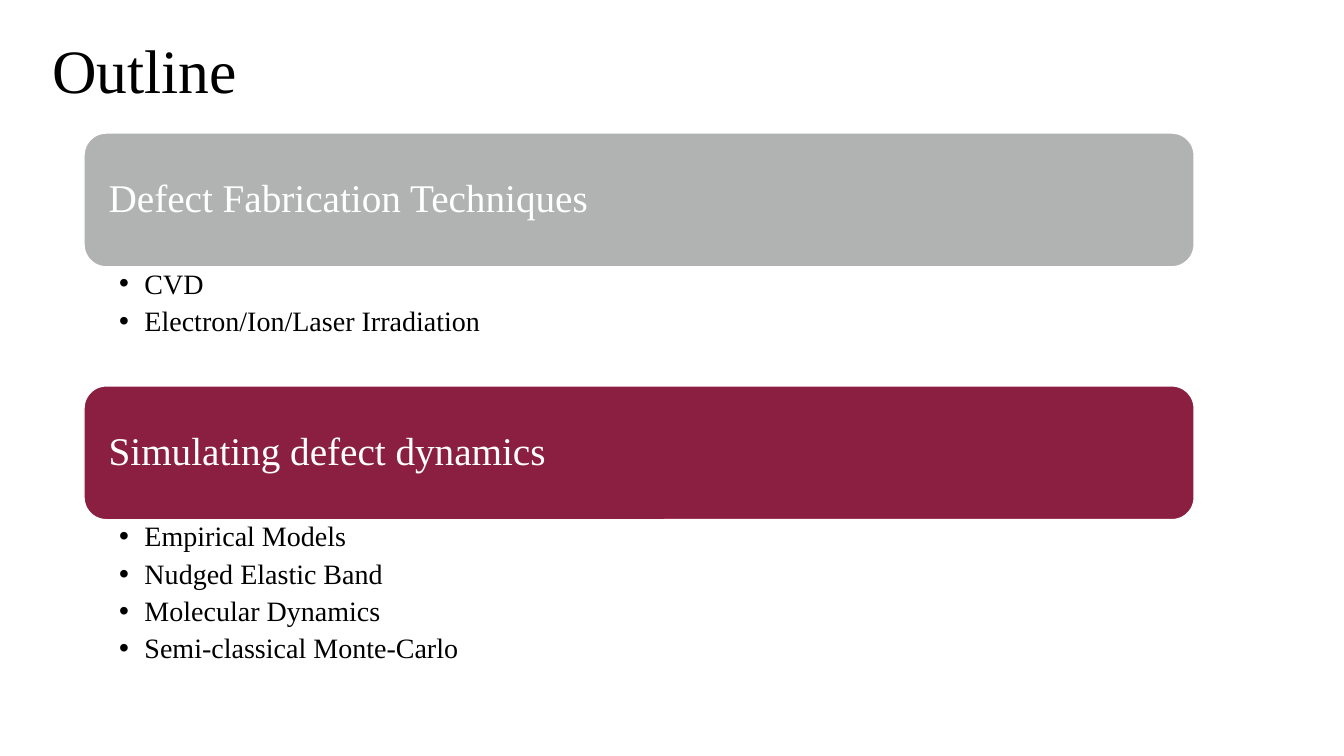
from pptx import Presentation
from pptx.dml.color import RGBColor
from pptx.enum.shapes import MSO_SHAPE
from pptx.enum.text import MSO_ANCHOR, MSO_AUTO_SIZE, PP_ALIGN
from pptx.util import Inches, Pt

theme = {
    "font": "Times New Roman",
    "ink": RGBColor.from_string("000000"),
    "paper": RGBColor.from_string("FFFFFF"),
    "gray": RGBColor.from_string("B1B3B3"),
    "maroon": RGBColor.from_string("8B1F41"),
    "title": Pt(44),
    "head": Pt(28),
    "item": Pt(20),
}

deck = Presentation()
deck.slide_width, deck.slide_height = Inches(13.33), Inches(7.5)
col, row = deck.slide_width / 100, deck.slide_height / 100


def place(shape, left, top, width, height):
    box = {"left": left * col, "top": top * row,
           "width": width * col, "height": height * row}
    for name, value in box.items():
        setattr(shape, name, int(value))


def write(shape, lines, size, color, frame, para):
    text = shape.text_frame
    text.text = "\n".join(lines)
    frame = {"word_wrap": True, "auto_size": MSO_AUTO_SIZE.NONE, **frame}
    para = {"alignment": PP_ALIGN.LEFT, "line_spacing": 0.9,
            "space_before": Pt(0), **para}
    for name, value in frame.items():
        setattr(text, name, value)
    for line in text.paragraphs:
        for name, value in para.items():
            setattr(line, name, value)
        for run in line.runs:
            run.font.name = theme["font"]
            run.font.size = theme[size]
            run.font.color.rgb = theme[color]


slide = deck.slides.add_slide(deck.slide_layouts.get_by_name("Two Content"))
title, *lists = slide.placeholders
place(title, 3.15, 0, 86.25, 19.33)
write(title, ["Outline"], "title", "ink",
      {"vertical_anchor": MSO_ANCHOR.MIDDLE}, {})

parts = [
    ("Defect Fabrication Techniques", "gray", 15.75,
     ["CVD", "Electron/Ion/Laser Irradiation"]),
    ("Simulating defect dynamics", "maroon", 22.5,
     ["Empirical Models", "Nudged Elastic Band", "Molecular Dynamics",
      "Semi-classical Monte-Carlo"]),
]
left, top, width, tall = 6.25, 17.6, 82.6, 17.7
inset = int(1.35 * col)
dent = int(1.88 * col)
head = {"vertical_anchor": MSO_ANCHOR.MIDDLE,
        "margin_left": inset, "margin_right": inset}
body = {"vertical_anchor": MSO_ANCHOR.TOP,
        "margin_left": int(2.62 * col), "margin_right": int(1.2 * col),
        "margin_top": int(0.4 * row), "margin_bottom": int(0.4 * row)}

for (name, fill, depth, items), block in zip(parts, lists):
    bar = slide.shapes.add_shape(MSO_SHAPE.ROUNDED_RECTANGLE, 0, 0, 0, 0)
    place(bar, left, top, width, tall)
    bar.shadow.inherit = False
    bar.fill.solid()
    bar.fill.fore_color.rgb = theme[fill]
    bar.line.color.rgb = theme["paper"]
    bar.line.width = Pt(1)
    write(bar, [name], "head", "paper", head, {})
    top += tall

    place(block, left, top, width, depth)
    write(block, items, "item", "ink", body, {"space_after": Pt(5)})
    for line in block.text_frame.paragraphs:
        form = line._p.get_or_add_pPr()
        form.set("marL", str(dent))
        form.set("indent", str(-dent))
    top += depth

deck.save("out.pptx")
